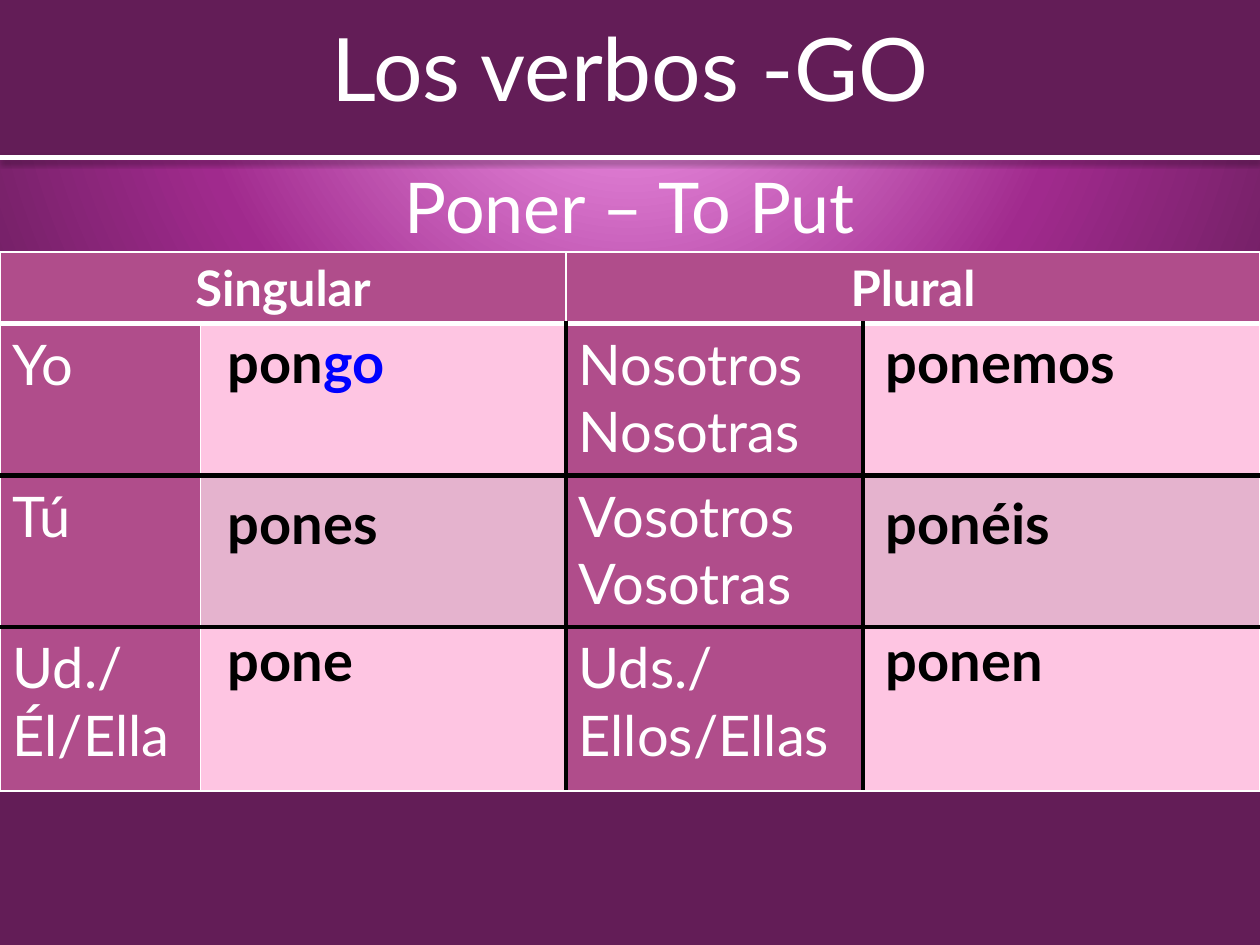
from itertools import product
from typing import NamedTuple

from lxml.etree import SubElement
from pptx import Presentation
from pptx.dml.color import RGBColor
from pptx.enum.shapes import MSO_CONNECTOR as Connector, MSO_SHAPE as Shape
from pptx.enum.text import MSO_ANCHOR as Anchor, PP_ALIGN as Align
from pptx.oxml import parse_xml
from pptx.oxml.ns import nsdecls, qn
from pptx.util import Cm, Pt

FONT = "Lato"
WHITE, BLACK, BLUE = "FFFFFF", "000000", "0000FF"
PLUM, ROSE, PINK, MAUVE = "631D57", "B04D8B", "FEC5E2", "E5B3CE"
NO_STYLE = "{2D5ABB26-0587-4C30-8999-92F81FD0307C}"
WIDTH, HEIGHT, BANNER = 25.4, 19.05, 3.18


class Edge(NamedTuple):
    color: str
    points: float


class Verb(NamedTuple):
    stem: str
    ending: str
    left: float
    top: float
    width: float
    height: float


THIN, THICK, DARK = Edge(WHITE, 1), Edge(WHITE, 3), Edge(BLACK, 3)
COLUMNS = [4.04, 7.37, 5.99, 8.0]
ROWS = [1.42, 3.06, 3.06, 3.3]
ACROSS = [THIN, THICK, DARK, DARK, THIN]
DOWN = [THIN, THIN, DARK, DARK, THIN]
PRONOUNS = [
    ("Yo", "Nosotros\nNosotras"),
    ("Tú", "Vosotros\nVosotras"),
    ("Ud./Él/Ella", "Uds./Ellos/Ellas"),
]
SINGULAR, PLURAL = 4.34, 17.6
VERBS = [
    Verb("pon", "go", SINGULAR, 6.48, 6.25, 1.6),
    Verb("pones", "", SINGULAR, 9.73, 5.94, 1.6),
    Verb("pone", "", SINGULAR, 12.5, 6.25, 1.7),
    Verb("ponemos", "", PLURAL, 6.48, 7.16, 1.73),
    Verb("ponéis", "", PLURAL, 9.73, 6.4, 1.6),
    Verb("ponen", "", PLURAL, 12.5, 6.1, 1.6),
]


def rgb(color: str) -> RGBColor:
    return RGBColor.from_string(color)


def style(paragraph, size: float, color: str, bold=False, align=Align.LEFT) -> None:
    font = paragraph.font
    font.name, font.size, font.bold = FONT, Pt(size), bold
    font.color.rgb = rgb(color)
    paragraph.alignment = align


def paint_background(slide) -> None:
    """Fill the slide with a glow centred above its top edge."""
    slide.background.fill.gradient()
    gradient = next(slide.element.iter(qn("a:gradFill")))
    for child in list(gradient):
        gradient.remove(child)
    stops = SubElement(gradient, qn("a:gsLst"))
    for percent, color in [(0, "FEA8F7"), (57, "A02A8D"), (100, PLUM)]:
        stop = SubElement(stops, qn("a:gs"), pos=str(percent * 1000))
        SubElement(stop, qn("a:srgbClr"), val=color)
    circle = SubElement(gradient, qn("a:path"), path="circle")
    SubElement(circle, qn("a:fillToRect"), l="50000", t="-80000", r="50000", b="180000")


def add_banner(slide) -> None:
    banner = slide.shapes.add_shape(Shape.RECTANGLE, 0, 0, Cm(WIDTH), Cm(BANNER))
    banner.shadow.inherit = False
    banner.fill.solid()
    banner.fill.fore_color.rgb = rgb(PLUM)
    banner.line.fill.background()


def add_rule(slide) -> None:
    rule = slide.shapes.add_connector(
        Connector.STRAIGHT, 0, Cm(BANNER), Cm(WIDTH), Cm(BANNER))
    rule.line.color.rgb = rgb(WHITE)
    rule.line.width = Pt(3)
    rule.element.spPr.append(parse_xml(
        f'<a:effectLst {nsdecls("a")}>'
        f'<a:outerShdw blurRad="{Pt(3.1)}" dist="{Pt(1.6)}" dir="5400000" rotWithShape="0">'
        f'<a:srgbClr val="{BLACK}"><a:alpha val="38000"/></a:srgbClr>'
        '</a:outerShdw></a:effectLst>'))


def add_heading(slide, text: str, top: float, height: float, size: float, anchor) -> None:
    frame = slide.shapes.add_textbox(0, Cm(top), Cm(WIDTH), Cm(height)).text_frame
    frame.word_wrap = True
    frame.vertical_anchor = anchor
    frame.text = text
    style(frame.paragraphs[0], size, WHITE, align=Align.CENTER)


def add_plain_table(slide, left: float, top: float, widths: list[float], heights: list[float]):
    """Add a table without style, banding or borders."""
    table = slide.shapes.add_table(
        len(heights), len(widths), Cm(left), Cm(top),
        Cm(sum(widths)), Cm(sum(heights))).table
    table.first_row = table.horz_banding = False
    next(table._tbl.iter(qn("a:tableStyleId"))).text = NO_STYLE
    for column, width in zip(table.columns, widths):
        column.width = Cm(width)
    for row, height in zip(table.rows, heights):
        row.height = Cm(height)
    return table


def set_borders(cell, left: Edge, right: Edge, top: Edge, bottom: Edge) -> None:
    properties = cell._tc.get_or_add_tcPr()
    sides = zip(("lnL", "lnR", "lnT", "lnB"), (left, right, top, bottom))
    for index, (tag, edge) in enumerate(sides):
        properties.insert(index, parse_xml(
            f'<a:{tag} {nsdecls("a")} w="{Pt(edge.points)}"><a:solidFill>'
            f'<a:srgbClr val="{edge.color}"/></a:solidFill></a:{tag}>'))


def fill_cell(cell, text: str, size: float, bold=False, align=Align.LEFT) -> None:
    cell.text = text
    for paragraph in cell.text_frame.paragraphs:
        style(paragraph, size, WHITE, bold, align)


def add_conjugation_grid(slide) -> None:
    grid = add_plain_table(slide, 0, 5.08, COLUMNS, ROWS)
    for row, column in product(range(len(ROWS)), range(len(COLUMNS))):
        cell = grid.cell(row, column)
        is_label = row == 0 or column % 2 == 0
        cell.fill.solid()
        cell.fill.fore_color.rgb = rgb(ROSE if is_label else MAUVE if row == 2 else PINK)
        left, right = DOWN[column:column + 2] if row else (THIN, THIN)
        set_borders(cell, left, right, ACROSS[row], ACROSS[row + 1])
    for column, number in [(0, "Singular"), (2, "Plural")]:
        grid.cell(0, column).merge(grid.cell(0, column + 1))
        fill_cell(grid.cell(0, column), number, 28, True, Align.CENTER)
    for row, (singular, plural) in enumerate(PRONOUNS, start=1):
        fill_cell(grid.cell(row, 0), singular, 32)
        fill_cell(grid.cell(row, 2), plural, 32)


def add_verb(slide, verb: Verb) -> None:
    cell = add_plain_table(slide, verb.left, verb.top, [verb.width], [verb.height]).cell(0, 0)
    cell.fill.background()
    paragraph = cell.text_frame.paragraphs[0]
    style(paragraph, 32, BLACK, bold=True)
    paragraph.add_run().text = verb.stem
    if verb.ending:
        ending = paragraph.add_run()
        ending.text = verb.ending
        ending.font.color.rgb = rgb(BLUE)


def main() -> None:
    deck = Presentation()
    deck.slide_width, deck.slide_height = Cm(WIDTH), Cm(HEIGHT)
    slide = deck.slides.add_slide(deck.slide_layouts[6])
    paint_background(slide)
    add_banner(slide)
    add_heading(slide, "Poner – To Put", BANNER, 13.2, 40, Anchor.TOP)
    add_rule(slide)
    add_heading(slide, "Los verbos -GO", 0, 2.7, 50, Anchor.MIDDLE)
    add_conjugation_grid(slide)
    for verb in VERBS:
        add_verb(slide, verb)
    deck.save("out.pptx")


if __name__ == "__main__":
    main()
